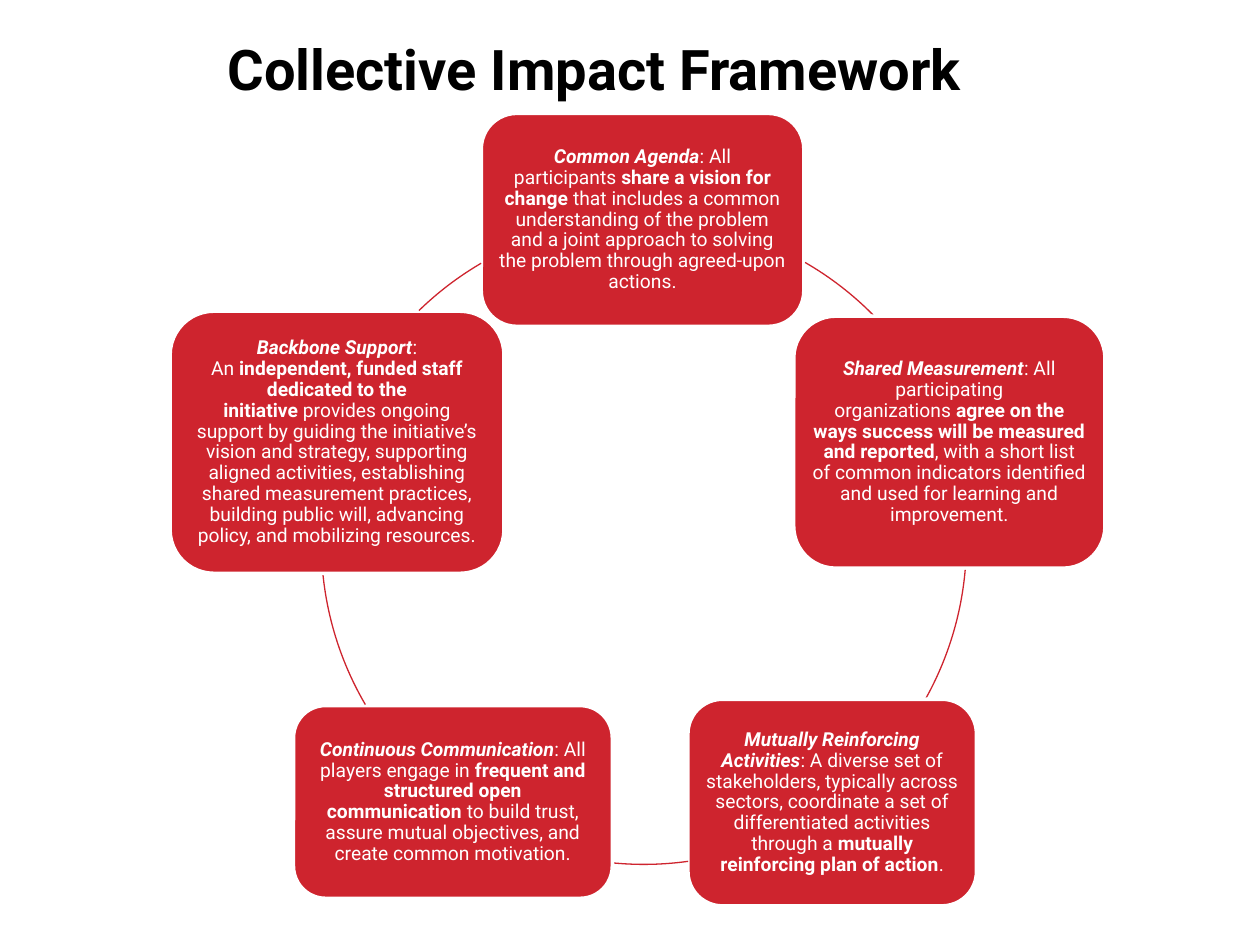
from dataclasses import dataclass

from pptx import Presentation
from pptx.dml.color import RGBColor
from pptx.enum.shapes import MSO_SHAPE
from pptx.enum.text import MSO_ANCHOR, PP_ALIGN
from pptx.util import Inches, Pt

ROUNDED, ARC = MSO_SHAPE.ROUNDED_RECTANGLE, MSO_SHAPE.ARC
CENTER, MIDDLE = PP_ALIGN.CENTER, MSO_ANCHOR.MIDDLE
COLUMNS, ROWS = 100, 75
TITLE_ONLY = 5
NO_BREAK_SPACE = chr(160)


@dataclass(frozen=True)
class Theme:
    font: str = "Roboto"
    red: RGBColor = RGBColor(0xCE, 0x24, 0x2E)
    white: RGBColor = RGBColor(255, 255, 255)
    black: RGBColor = RGBColor(0, 0, 0)
    title_size: Pt = Pt(32)
    body_size: Pt = Pt(11)
    border: Pt = Pt(2)
    ring: Pt = Pt(0.75)
    inset: Inches = Inches(0.05)


THEME = Theme()
TITLE_BOX = (0, 0, 96.7, 10.8)
RING_BOX = (25.5, 17.4, 51.2, 51.2)

CONDITIONS = [
    ((38.2, 9, 25.6, 16.9), (300, 315.3), "Common Agenda",
     ": All participants ", "share a vision for change ",
     "that includes a common understanding of the problem and a joint "
     "approach to solving the problem through agreed-upon actions."),
    ((63, 25.1, 24.7, 20), (5, 29), "Shared Measurement",
     ": All participating organizations ",
     "agree on the ways success will be measured and reported",
     ", with a short list of common indicators identified and used for "
     "learning and improvement."),
    ((54.6, 55.5, 22.9, 16.4), (82.1, 95.4), "Mutually Reinforcing Activities",
     ": A diverse set of stakeholders, typically across sectors, coordinate "
     "a set of differentiated activities through a ",
     "mutually reinforcing plan of action", "."),
    ((23.3, 56, 25.3, 15.3), (149.7, 174.2), "Continuous Communication",
     ": All players engage in ",
     "frequent and structured open communication ",
     "to build trust, assure mutual objectives, and create common motivation."),
    ((13.5, 24.7, 26.5, 20.8), (225.8, 239.7), "Backbone Support",
     ": An ", "independent, funded staff dedicated to the initiative ",
     "provides ongoing support by guiding the initiative’s vision and "
     "strategy, supporting aligned activities, establishing shared "
     "measurement practices, building public will, advancing policy, and "
     "mobilizing resources."),
]


def apply(target, formats):
    for name, value in formats.items():
        setattr(target, name, value)


def add_run(paragraph, text, color, **formats):
    run = paragraph.add_run()
    run.text = text
    apply(run.font, {"name": THEME.font, **formats})
    run.font.color.rgb = color


def bind_to_next(text):
    return text[:-1] + NO_BREAK_SPACE if text.endswith(" ") else text


def place_title(slide, box):
    title = slide.shapes.title
    apply(title, dict(zip(("left", "top", "width", "height"), box)))
    apply(title.text_frame, {"vertical_anchor": MIDDLE, "word_wrap": True,
                             "margin_right": Inches(0.33)})
    heading = title.text_frame.paragraphs[0]
    heading.alignment = CENTER
    add_run(heading, "Collective Impact Framework", THEME.black,
            size=THEME.title_size, bold=True)


def place_condition(slide, box, name, lead, emphasis, rest):
    card = slide.shapes.add_shape(ROUNDED, *box)
    card.shadow.inherit = False
    card.fill.solid()
    card.fill.fore_color.rgb = THEME.red
    card.line.color.rgb = THEME.white
    card.line.width = THEME.border
    margins = {f"margin_{side}": THEME.inset
               for side in ("left", "top", "right", "bottom")}
    apply(card.text_frame, {"word_wrap": True, "vertical_anchor": MIDDLE, **margins})
    statement = card.text_frame.paragraphs[0]
    apply(statement, {"alignment": CENTER, "line_spacing": 0.9})
    for text, bold, italic in ((name, True, True), (lead, False, False),
                               (emphasis, True, False), (rest, False, False)):
        add_run(statement, bind_to_next(text), THEME.white,
                size=THEME.body_size, bold=bold, italic=italic)


def place_ring_segment(slide, box, angles):
    segment = slide.shapes.add_shape(ARC, *box)
    segment.shadow.inherit = False
    segment.fill.background()
    segment.line.color.rgb = THEME.red
    segment.line.width = THEME.ring
    for index, degrees in enumerate(angles):
        segment.adjustments[index] = degrees * 60000 / 100000


def main():
    deck = Presentation()
    deck.slide_width, deck.slide_height = Inches(10), Inches(7.5)
    column, row = deck.slide_width / COLUMNS, deck.slide_height / ROWS

    def on_grid(box):
        return [round(n * unit) for n, unit in zip(box, (column, row) * 2)]

    slide = deck.slides.add_slide(deck.slide_layouts[TITLE_ONLY])
    place_title(slide, on_grid(TITLE_BOX))
    for box, angles, *wording in CONDITIONS:
        place_condition(slide, on_grid(box), *wording)
        place_ring_segment(slide, on_grid(RING_BOX), angles)
    deck.save("out.pptx")


if __name__ == "__main__":
    main()
